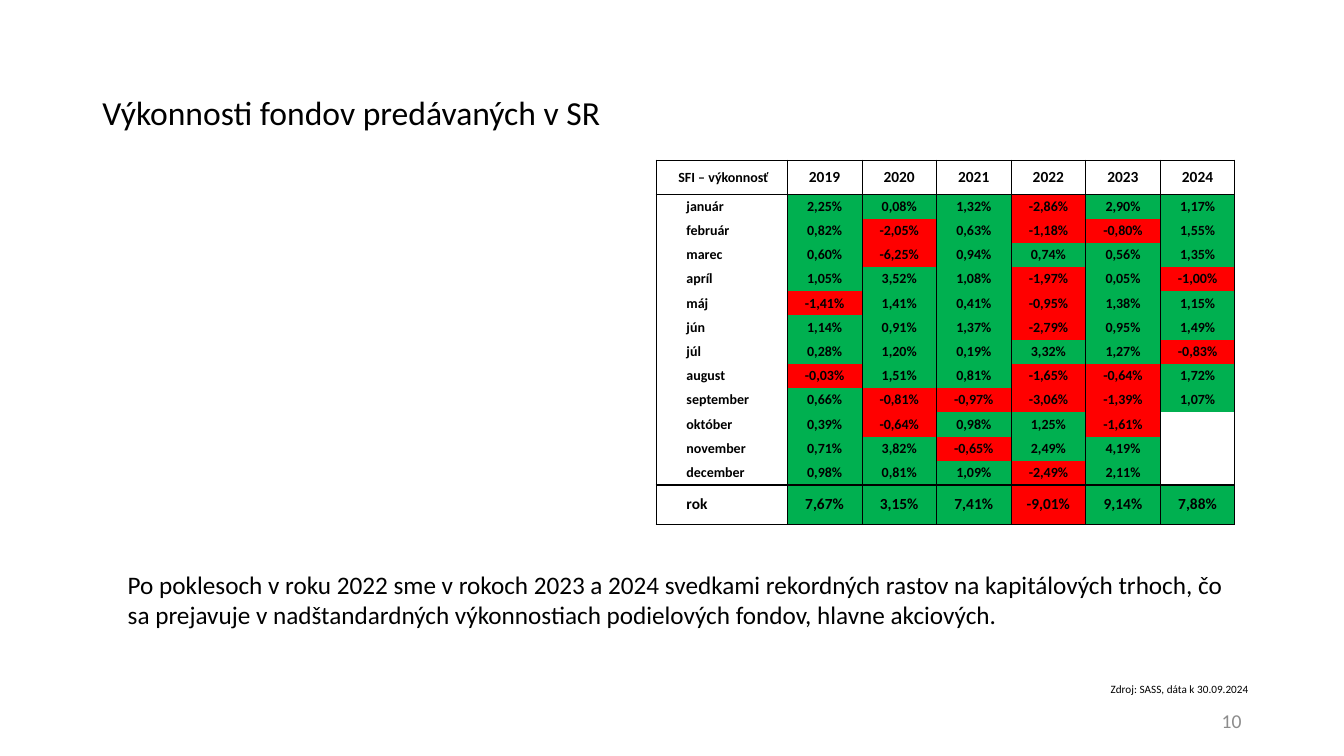
from lxml import etree
from pptx import Presentation
from pptx.dml.color import RGBColor
from pptx.enum.text import MSO_ANCHOR as Anchor, PP_ALIGN as Align
from pptx.oxml.ns import qn
from pptx.util import Cm, Pt

# Content
TITLE = "Výkonnosti fondov predávaných v SR"
COMMENT = ("Po poklesoch v roku 2022 sme v rokoch 2023 a 2024 svedkami rekordných "
           "rastov na kapitálových trhoch, čo sa prejavuje v nadštandardných "
           "výkonnostiach podielových fondov, hlavne akciových.")
SOURCE = "Zdroj: SASS, dáta k 30.09.2024"
PAGE = "10"
RETURNS = [
    (" SFI – výkonnosť", "2019", "2020", "2021", "2022", "2023", "2024"),
    ("január", "2,25%", "0,08%", "1,32%", "-2,86%", "2,90%", "1,17%"),
    ("február", "0,82%", "-2,05%", "0,63%", "-1,18%", "-0,80%", "1,55%"),
    ("marec", "0,60%", "-6,25%", "0,94%", "0,74%", "0,56%", "1,35%"),
    ("apríl", "1,05%", "3,52%", "1,08%", "-1,97%", "0,05%", "-1,00%"),
    ("máj", "-1,41%", "1,41%", "0,41%", "-0,95%", "1,38%", "1,15%"),
    ("jún", "1,14%", "0,91%", "1,37%", "-2,79%", "0,95%", "1,49%"),
    ("júl", "0,28%", "1,20%", "0,19%", "3,32%", "1,27%", "-0,83%"),
    ("august", "-0,03%", "1,51%", "0,81%", "-1,65%", "-0,64%", "1,72%"),
    ("september", "0,66%", "-0,81%", "-0,97%", "-3,06%", "-1,39%", "1,07%"),
    ("október", "0,39%", "-0,64%", "0,98%", "1,25%", "-1,61%", ""),
    ("november", "0,71%", "3,82%", "-0,65%", "2,49%", "4,19%", ""),
    ("december", "0,98%", "0,81%", "1,09%", "-2,49%", "2,11%", ""),
    ("rok", "7,67%", "3,15%", "7,41%", "-9,01%", "9,14%", "7,88%"),
]
BLACK, GREY, GAIN, LOSS = "000000", "8C8C8C", "00B050", "FF0000"
THIN, THICK = 0.5, 1
LAST_ROW, LAST_COL = len(RETURNS) - 1, len(RETURNS[0]) - 1
COL_WIDTHS = [3.3] + [1.88] * LAST_COL
ROW_HEIGHTS = [0.86] + [0.61] * (LAST_ROW - 1) + [0.99]


def rgb(color):
    return RGBColor.from_string(color)


def add_run(p, text, size, color=BLACK, bold=False):
    r = p.add_run()
    r.text = text
    r.font.name, r.font.size, r.font.bold = "Calibri", Pt(size), bold
    r.font.color.rgb = rgb(color)


def add_text(s, box, text, size, color=BLACK, align=Align.LEFT,
             anchor=Anchor.TOP, spacing=None):
    tf = s.shapes.add_textbox(*map(Cm, box)).text_frame
    tf.word_wrap, tf.vertical_anchor = True, anchor
    p = tf.paragraphs[0]
    p.alignment, p.line_spacing = align, spacing
    add_run(p, text, size, color)


def set_border(cell, side, width):
    ln = etree.SubElement(cell._tc.get_or_add_tcPr(), qn(f"a:ln{side}"))
    if width:
        ln.set("w", str(Pt(width)))
        fill = etree.SubElement(ln, qn("a:solidFill"))
        etree.SubElement(fill, qn("a:srgbClr"), val=BLACK)
    else:
        etree.SubElement(ln, qn("a:noFill"))


def fill_cell(cell, row, col, text):
    edge_row = row in (0, LAST_ROW)
    is_label = col == 0 and row > 0
    cell.vertical_anchor = Anchor.MIDDLE
    cell.margin_right = cell.margin_top = cell.margin_bottom = 0
    cell.margin_left = Cm(0.76) if is_label else 0

    # Thick outline and rules around the header and the yearly total
    set_border(cell, "L", THICK if col == 0 else THIN)
    set_border(cell, "R", THICK if col == LAST_COL else THIN)
    set_border(cell, "T", THICK if edge_row or row == 1 else None)
    set_border(cell, "B", THICK if edge_row or row == LAST_ROW - 1 else None)

    if row and col and text:
        cell.fill.solid()
        cell.fill.fore_color.rgb = rgb(LOSS if text.startswith("-") else GAIN)
    else:
        cell.fill.background()

    p = cell.text_frame.paragraphs[0]
    p.alignment = Align.LEFT if is_label else Align.CENTER
    if text:
        large = row == LAST_ROW or (row == 0 and col > 0)
        add_run(p, text, 11 if large else 10, bold=True)
    else:
        etree.SubElement(p._p, qn("a:endParaRPr"), sz="1000")


def add_returns(s):
    shape = s.shapes.add_table(len(RETURNS), len(COL_WIDTHS), Cm(16.54), Cm(4.04),
                               Cm(sum(COL_WIDTHS)), Cm(sum(ROW_HEIGHTS)))
    table = shape.table
    table.first_row = table.horz_banding = False
    for column, width in zip(table.columns, COL_WIDTHS):
        column.width = Cm(width)
    for i, (height, values) in enumerate(zip(ROW_HEIGHTS, RETURNS)):
        table.rows[i].height = Cm(height)
        for j, text in enumerate(values):
            fill_cell(table.cell(i, j), i, j, text)


def main():
    prs = Presentation()
    prs.slide_width, prs.slide_height = Cm(33.87), Cm(19.05)
    s = prs.slides.add_slide(prs.slide_layouts[6])

    # Title, page number, source and comment
    add_text(s, (2.33, 1.04, 29.21, 3.68), TITLE, 24, anchor=Anchor.MIDDLE, spacing=0.9)
    add_text(s, (23.92, 17.66, 7.62, 1.01), PAGE, 14, GREY, Align.RIGHT, Anchor.MIDDLE)
    add_text(s, (27.74, 17.07, 4.11, 0.6), SOURCE, 8)
    add_text(s, (2.97, 14.22, 28.7, 1.8), COMMENT, 18)

    # Monthly and yearly returns
    add_returns(s)
    prs.save("out.pptx")


if __name__ == "__main__":
    main()
